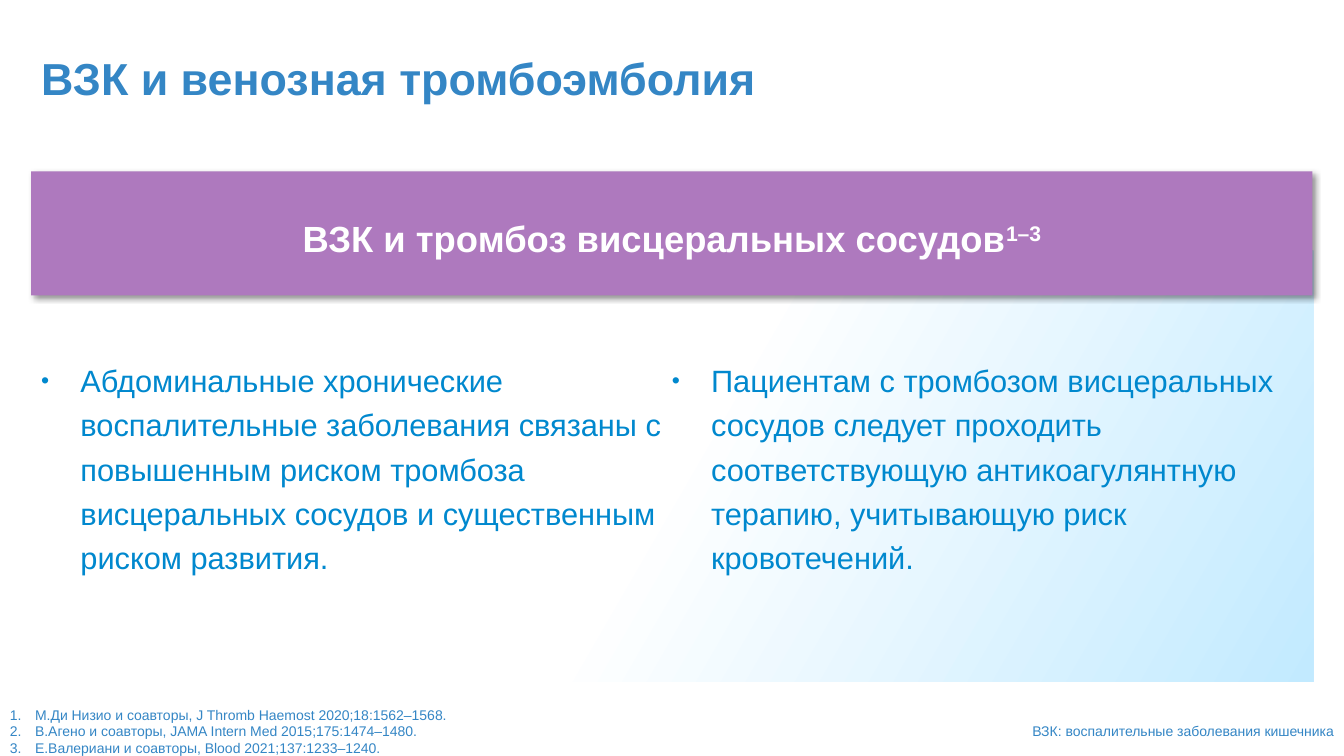
from copy import deepcopy
from dataclasses import dataclass, field

from lxml.etree import SubElement
from pptx import Presentation
from pptx.dml.color import RGBColor
from pptx.enum.shapes import MSO_SHAPE
from pptx.enum.text import MSO_ANCHOR, PP_ALIGN
from pptx.oxml.ns import qn
from pptx.util import Pt

BLUE = RGBColor(0x34, 0x86, 0xC5)
CYAN = RGBColor(0x00, 0x88, 0xCE)
PALE = RGBColor(0xC2, 0xEA, 0xFF)
PURPLE = RGBColor(0xAE, 0x79, 0xBE)
WHITE = RGBColor(0xFF, 0xFF, 0xFF)

EDGE = 22.32
WIDE = 915.12
FOOT = 504.72


@dataclass
class Block:
    """Text with its frame (left, top, width, height) and its formats."""
    box: tuple[float, float, float, float]
    lines: list[str]
    font: dict
    para: dict = field(default_factory=dict)
    gap: float = 0
    hang: float = 0
    mark: list[tuple[str, dict]] = field(default_factory=list)
    cols: int = 1


def apply(target, values: dict) -> None:
    for name, value in values.items():
        setattr(target, name, value)


def style(run, values: dict) -> None:
    apply(run.font, {"name": "Arial"} | values)
    run.font.color.rgb = values["tint"] if "tint" in values else BLUE


def write(shape, block: Block) -> None:
    frame = shape.text_frame
    apply(frame, {"word_wrap": True, "vertical_anchor": MSO_ANCHOR.MIDDLE})
    if block.cols > 1:
        frame._txBody.bodyPr.set("numCol", str(block.cols))
    for i, line in enumerate(block.lines):
        para = frame.add_paragraph() if i else frame.paragraphs[0]
        apply(para, block.para)
        if i and block.gap:
            para.space_before = Pt(block.gap)
        props = para._p.get_or_add_pPr()
        if block.hang:
            props.set("marL", str(Pt(block.hang)))
            props.set("indent", str(-Pt(block.hang)))
        for tag, attrs in block.mark:
            SubElement(props, qn(tag), attrs)
        run = para.add_run()
        run.text = line
        style(run, block.font)


def add_text(slide, block: Block) -> None:
    write(slide.shapes.add_textbox(*map(Pt, block.box)), block)


def add_rect(slide, box: tuple[float, float, float, float]):
    rect = slide.shapes.add_shape(MSO_SHAPE.RECTANGLE, *map(Pt, box))
    rect.shadow.inherit = False
    rect.line.fill.background()
    return rect


def add_panel(slide) -> None:
    fill = add_rect(slide, (23.04, 179.28, WIDE, 307.44)).fill
    fill.gradient()
    fill.gradient_angle = 330
    first = fill.gradient_stops[0]._gs
    first.addnext(deepcopy(first))
    shades = [(0, WHITE), (0.5, WHITE), (1, PALE)]
    for stop, (place, shade) in zip(fill.gradient_stops, shades):
        stop.position = place
        stop.color.rgb = shade


def add_banner(slide) -> None:
    rect = add_rect(slide, BANNER.box)
    rect.fill.solid()
    rect.fill.fore_color.rgb = PURPLE
    write(rect, BANNER)
    apply(rect.text_frame, {"margin_top": Pt(5.76), "margin_bottom": Pt(5.76)})
    # Raised reference numbers
    run = rect.text_frame.paragraphs[0].add_run()
    run.text = "1–3"
    style(run, BANNER.font)
    run._r.get_or_add_rPr().set("baseline", "30000")
    # Soft shadow to the lower right
    effect = rect._element.spPr.find(qn("a:effectLst"))
    cast = SubElement(effect, qn("a:outerShdw"), {
        "blurRad": str(Pt(4)), "dist": str(Pt(3)), "dir": "2700000",
        "algn": "tl", "rotWithShape": "0"})
    shade = SubElement(cast, qn("a:srgbClr"), {"val": "000000"})
    SubElement(shade, qn("a:alpha"), {"val": "40000"})


TITLE = Block((EDGE, 16.56, 822.24, 82.08), ["ВЗК и венозная тромбоэмболия"],
              {"size": Pt(32), "bold": True}, {"line_spacing": 0.9})
SOURCES = Block(
    (0, FOOT, 480.24, 35.28),
    ["М.Ди Низио и соавторы, J Thromb Haemost 2020;18:1562–1568.",
     "В.Агено и соавторы, JAMA Intern Med 2015;175:1474–1480.",
     "Е.Валериани и соавторы, Blood 2021;137:1233–1240."],
    {"size": Pt(10)}, hang=18,
    mark=[("a:buFont", {"typeface": "+mj-lt"}),
          ("a:buAutoNum", {"type": "arabicPeriod"})])
POINTS = Block(
    (EDGE, 257.04, WIDE, 150.48),
    ["Абдоминальные хронические воспалительные заболевания связаны с "
     "повышенным риском тромбоза висцеральных сосудов и существенным "
     "риском развития.",
     "Пациентам с тромбозом висцеральных сосудов следует проходить "
     "соответствующую антикоагулянтную терапию, учитывающую риск "
     "кровотечений."],
    {"size": Pt(22), "tint": CYAN}, {"line_spacing": 1.2}, gap=10, hang=28.08,
    mark=[("a:buSzPct", {"val": "75000"}),
          ("a:buFont", {"typeface": "Arial"}),
          ("a:buChar", {"char": "•"})],
    cols=2)
BANNER = Block((EDGE, 122.4, WIDE, 88.56),
               ["ВЗК и тромбоз висцеральных сосудов"],
               {"size": Pt(26), "bold": True, "tint": WHITE},
               {"line_spacing": 1.2, "alignment": PP_ALIGN.CENTER})
NOTE = Block((424.8, FOOT, 534.96, 35.28),
             ["ВЗК: воспалительные заболевания кишечника"],
             {"size": Pt(10)}, {"alignment": PP_ALIGN.RIGHT})


def main() -> None:
    deck = Presentation()
    apply(deck, {"slide_width": Pt(960), "slide_height": Pt(540)})
    slide = deck.slides.add_slide(deck.slide_layouts[6])
    # Heading and references
    add_text(slide, TITLE)
    add_text(slide, SOURCES)
    # Body: panel, two columns, banner
    add_panel(slide)
    add_text(slide, POINTS)
    add_banner(slide)
    # Footnote
    add_text(slide, NOTE)
    deck.save("out.pptx")


if __name__ == "__main__":
    main()
